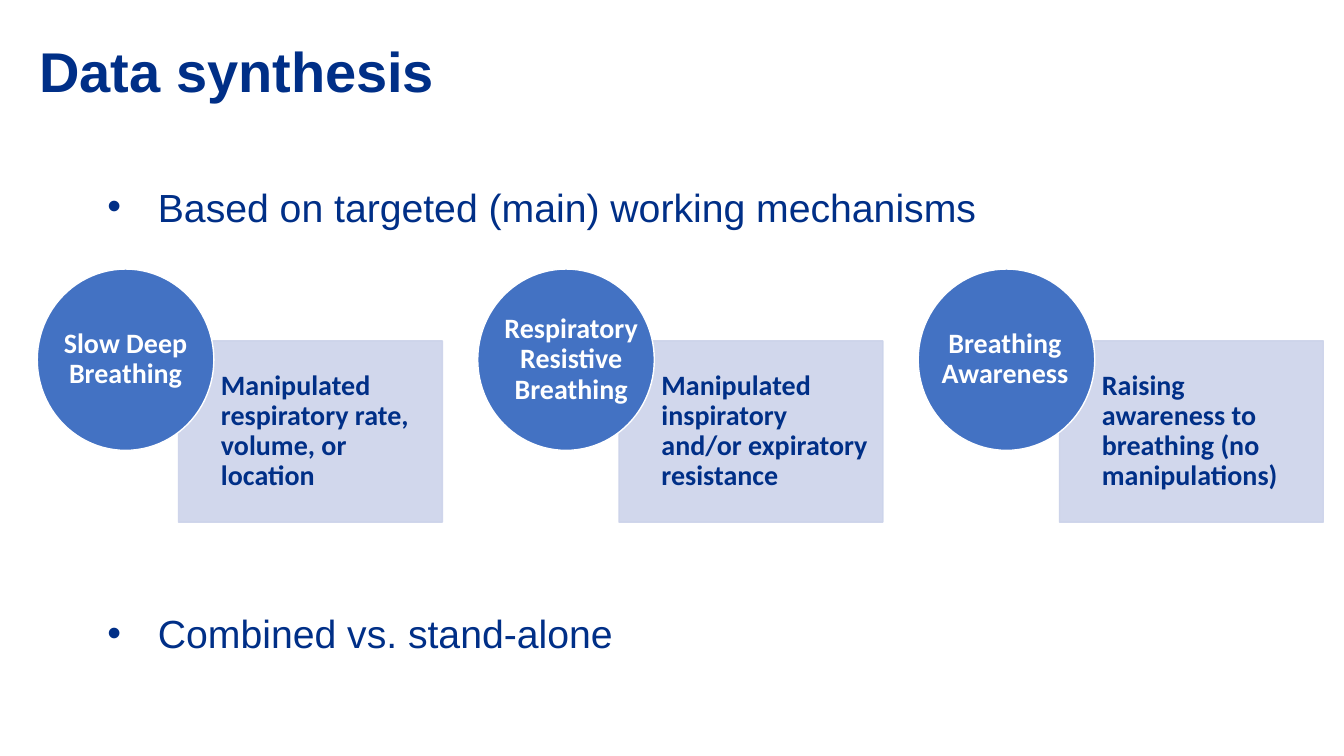
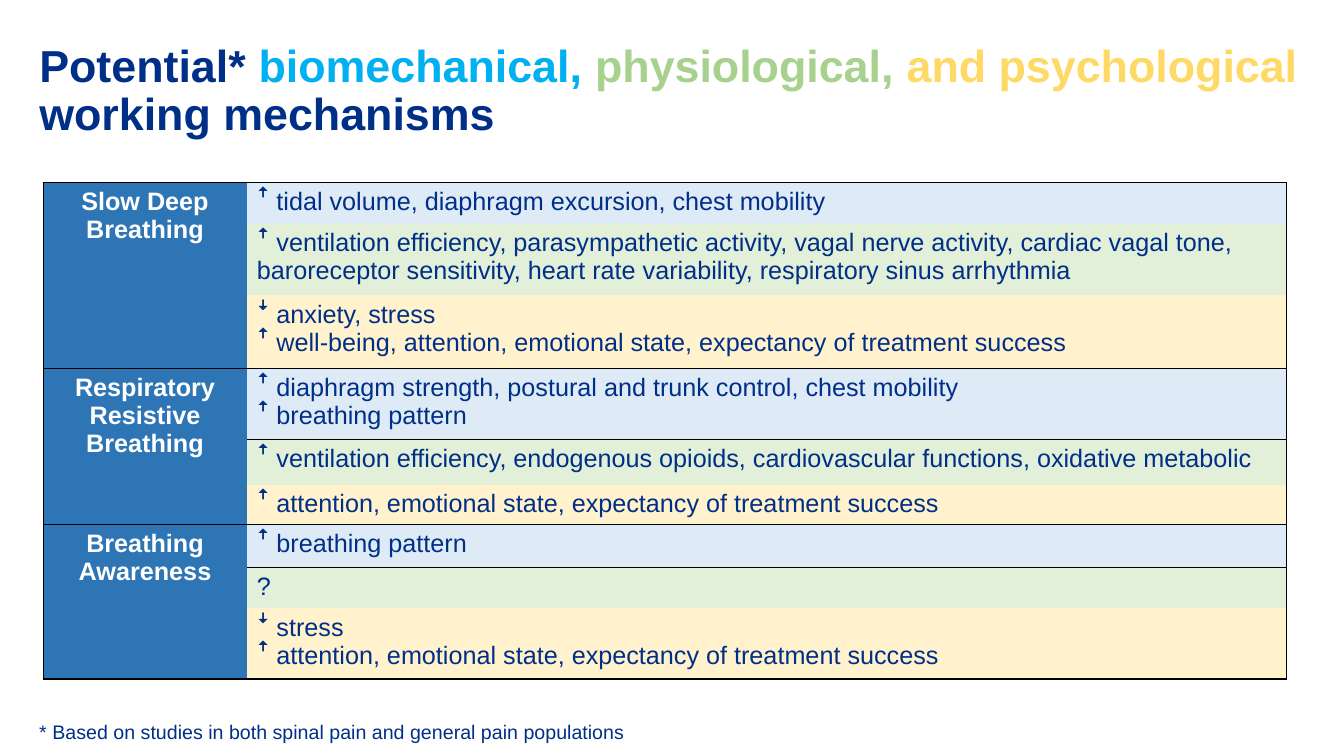
from dataclasses import dataclass
from typing import Optional

import pptx
import pptx.dml.color
import pptx.enum.shapes
import pptx.enum.text
import pptx.oxml
import pptx.oxml.ns
import pptx.util
from lxml import etree

Cm = pptx.util.Cm
Pt = pptx.util.Pt
ALIGN = pptx.enum.text.PP_ALIGN
ANCHOR = pptx.enum.text.MSO_ANCHOR
SHAPE = pptx.enum.shapes.MSO_SHAPE

NAVY = "002F87"
WHITE = "FFFFFF"
BLACK = "000000"
CIRCLE_BLUE = "4372C3"
PANEL_BLUE = "CCD3EA"
HEADING_BLUE = "2E75B6"
DOMAIN_FILLS = ("DEEBF7", "E2F0D9", "FFF2CC")


@dataclass(frozen=True)
class Span:
    text: str
    color: str = NAVY


@dataclass(frozen=True)
class Technique:
    name: str
    description: str
    name_width: float
    name_shift: float = 0.0


@dataclass(frozen=True)
class Effect:
    lines: tuple[str, ...]
    height: float


@dataclass(frozen=True)
class EffectGroup:
    name: str
    effects: tuple[Effect, Effect, Effect]
    ruled_below_first: bool = True


TECHNIQUES = (
    Technique("Slow Deep Breathing", "Manipulated respiratory rate, volume, or location", 3.15),
    Technique("Respiratory Resistive Breathing",
              "Manipulated inspiratory and/or expiratory resistance", 3.78, 0.13),
    Technique("Breathing Awareness", "Raising awareness to breathing (no manipulations)", 3.6, -0.04),
)

EFFECT_GROUPS = (
    EffectGroup("Slow Deep Breathing", (
        Effect(("ꜛ tidal volume, diaphragm excursion, chest mobility",), 1.04),
        Effect(("ꜛ ventilation efficiency, parasympathetic activity, vagal nerve activity, "
                "cardiac vagal tone, baroreceptor sensitivity, heart rate variability, "
                "respiratory sinus arrhythmia",), 1.8),
        Effect(("ꜜ anxiety, stress",
                "ꜛ well-being, attention, emotional state, expectancy of treatment success"), 1.84),
    ), ruled_below_first=False),
    EffectGroup("Respiratory Resistive Breathing", (
        Effect(("ꜛ diaphragm strength, postural and trunk control, chest mobility",
                "ꜛ breathing pattern"), 1.8),
        Effect(("ꜛ ventilation efficiency, endogenous opioids, cardiovascular functions, "
                "oxidative metabolic",), 1.13),
        Effect(("ꜛ attention, emotional state, expectancy of treatment success",), 1.01),
    )),
    EffectGroup("Breathing Awareness", (
        Effect(("ꜛ breathing pattern",), 1.08),
        Effect(("?",), 1.03),
        Effect(("ꜜ stress",
                "ꜛ attention, emotional state, expectancy of treatment success"), 1.78),
    )),
)


def rgb(color: str) -> pptx.dml.color.RGBColor:
    return pptx.dml.color.RGBColor.from_string(color)


def write(frame, paragraphs, *, size: float, font: str = "Arial", color: str = NAVY,
          bold: bool = False, align=ALIGN.LEFT, anchor=ANCHOR.TOP,
          spacing: Optional[float] = None) -> None:
    frame.word_wrap = True
    frame.vertical_anchor = anchor
    for index, content in enumerate(paragraphs):
        paragraph = frame.paragraphs[0] if index == 0 else frame.add_paragraph()
        paragraph.alignment = align
        if spacing is not None:
            paragraph.line_spacing = spacing
        spans = (Span(content, color),) if isinstance(content, str) else content
        for span in spans:
            run = paragraph.add_run()
            run.text = span.text
            run.font.name = font
            run.font.size = Pt(size)
            run.font.bold = bold
            run.font.color.rgb = rgb(span.color)


def set_insets(frame, left: float, top: float, right: float, bottom: float) -> None:
    frame.margin_left, frame.margin_top = Cm(left), Cm(top)
    frame.margin_right, frame.margin_bottom = Cm(right), Cm(bottom)


def add_text(slide, left: float, top: float, width: float, height: float):
    return slide.shapes.add_textbox(Cm(left), Cm(top), Cm(width), Cm(height)).text_frame


def add_titled_slide(deck, spans: tuple[Span, ...], *, width: float, size: float):
    slide = deck.slides.add_slide(deck.slide_layouts[5])
    title = slide.shapes.title
    title.left, title.top, title.width, title.height = Cm(0.74), Cm(0.97), Cm(width), Cm(1.75)
    title.text_frame.auto_size = pptx.enum.text.MSO_AUTO_SIZE.NONE
    set_insets(title.text_frame, 0.25, 0.13, 0.25, 0.13)
    write(title.text_frame, [spans], size=size, bold=True, spacing=0.9)
    return slide


def add_filled(slide, preset, left: float, top: float, width: float, height: float, *,
               fill: str, line: str, opacity: int = 100):
    shape = slide.shapes.add_shape(preset, Cm(left), Cm(top), Cm(width), Cm(height))
    shape.shadow.inherit = False
    shape.fill.solid()
    shape.fill.fore_color.rgb = rgb(fill)
    shape.line.color.rgb = rgb(line)
    shape.line.width = Pt(1)
    if opacity < 100:
        for tint in shape._element.spPr.iter(pptx.oxml.ns.qn("a:srgbClr")):
            etree.SubElement(tint, pptx.oxml.ns.qn("a:alpha"), val=str(opacity * 1000))
    return shape


def add_bullet(paragraph, indent: float) -> None:
    properties = paragraph._p.get_or_add_pPr()
    properties.set("marL", str(Cm(indent)))
    properties.set("indent", str(-Cm(indent)))
    color = etree.SubElement(properties, pptx.oxml.ns.qn("a:buClr"))
    etree.SubElement(color, pptx.oxml.ns.qn("a:srgbClr"), val=NAVY)
    etree.SubElement(properties, pptx.oxml.ns.qn("a:buFont"), typeface="Arial")
    etree.SubElement(properties, pptx.oxml.ns.qn("a:buChar"), char="•")


def add_technique(slide, technique: Technique, left: float) -> None:
    top, diameter, height = 6.78, 4.45, 4.57
    panel = add_filled(slide, SHAPE.RECTANGLE, left + 3.56, 8.59, 6.65, height,
                       fill=PANEL_BLUE, line=PANEL_BLUE, opacity=90)
    set_insets(panel.text_frame, 1.07, 0.3, 0.3, 0.3)
    write(panel.text_frame, [technique.description], size=20, font="Calibri", bold=True,
          anchor=ANCHOR.MIDDLE, spacing=0.9)
    add_filled(slide, SHAPE.OVAL, left, top, diameter, height, fill=CIRCLE_BLUE, line=WHITE)
    name_left = left + (diameter - technique.name_width) / 2 + technique.name_shift
    name = add_text(slide, name_left, top + 0.66, technique.name_width, height - 1.32)
    set_insets(name, 0, 0, 0, 0)
    write(name, [technique.name], size=20, font="Calibri", color=WHITE, bold=True,
          align=ALIGN.CENTER, anchor=ANCHOR.MIDDLE, spacing=0.9)


def set_borders(cell, drawn: str) -> None:
    properties = cell._tc.get_or_add_tcPr()
    for index, side in enumerate("LRTB"):
        border = pptx.oxml.parse_xml(
            f'<a:ln{side} {pptx.oxml.ns.nsdecls("a")} w="12700">'
            + (f'<a:solidFill><a:srgbClr val="{BLACK}"/></a:solidFill>' if side in drawn
               else "<a:noFill/>")
            + f"</a:ln{side}>")
        properties.insert(index, border)


def fill_cell(cell, color: str, borders: str) -> None:
    cell.fill.solid()
    cell.fill.fore_color.rgb = rgb(color)
    set_borders(cell, borders)


def add_effect_table(slide) -> None:
    per_group = len(DOMAIN_FILLS)
    heights = [effect.height for group in EFFECT_GROUPS for effect in group.effects]
    table = slide.shapes.add_table(len(heights), 2, Cm(1.09), Cm(4.6), Cm(31.34),
                                   Cm(sum(heights))).table
    table.columns[0].width, table.columns[1].width = Cm(5.13), Cm(26.21)
    for row, height in zip(table.rows, heights):
        row.height = Cm(height)
    for number, group in enumerate(EFFECT_GROUPS):
        first = number * per_group
        heading = table.cell(first, 0)
        heading.merge(table.cell(first + per_group - 1, 0))
        write(heading.text_frame, [group.name], size=18, color=WHITE, bold=True,
              align=ALIGN.CENTER)
        for offset, (effect, domain_fill) in enumerate(zip(group.effects, DOMAIN_FILLS)):
            top = "T" if offset == 0 else ""
            bottom = "B" if offset == per_group - 1 else ""
            fill_cell(table.cell(first + offset, 0), HEADING_BLUE,
                      "LTB" if top else "L" + bottom)
            rule = {0: "B", 1: "T"}.get(offset, "") if group.ruled_below_first else ""
            cell = table.cell(first + offset, 1)
            fill_cell(cell, domain_fill, "R" + top + bottom + rule)
            write(cell.text_frame, effect.lines, size=18)


def build_synthesis(deck) -> None:
    slide = add_titled_slide(deck, (Span("Data synthesis"),), width=29.21, size=40)
    grouping = add_text(slide, 2.46, 3.89, 30, 13)
    write(grouping, ["Based on targeted (main) working mechanisms", "Combined vs. stand-alone"],
          size=28, spacing=1.5)
    grouping.paragraphs[1].space_before = Pt(254)
    for paragraph in grouping.paragraphs:
        add_bullet(paragraph, 1.27)
    for index, technique in enumerate(TECHNIQUES):
        add_technique(slide, technique, 0.94 + index * 11.1)


def build_mechanisms(deck) -> None:
    heading = (Span("Potential* "), Span("biomechanical, ", "00B0F0"),
               Span("physiological, ", "A9D18E"), Span("and psychological", "FFD966"),
               Span(" working mechanisms"))
    slide = add_titled_slide(deck, heading, width=32.51, size=32)
    add_effect_table(slide)
    write(add_text(slide, 0.74, 18.01, 30, 0.86),
          ["* Based on studies in both spinal pain and general pain populations"], size=14)


def main() -> None:
    deck = pptx.Presentation()
    deck.slide_width, deck.slide_height = Cm(33.87), Cm(19.05)
    build_synthesis(deck)
    build_mechanisms(deck)
    deck.save("out.pptx")


if __name__ == "__main__":
    main()
